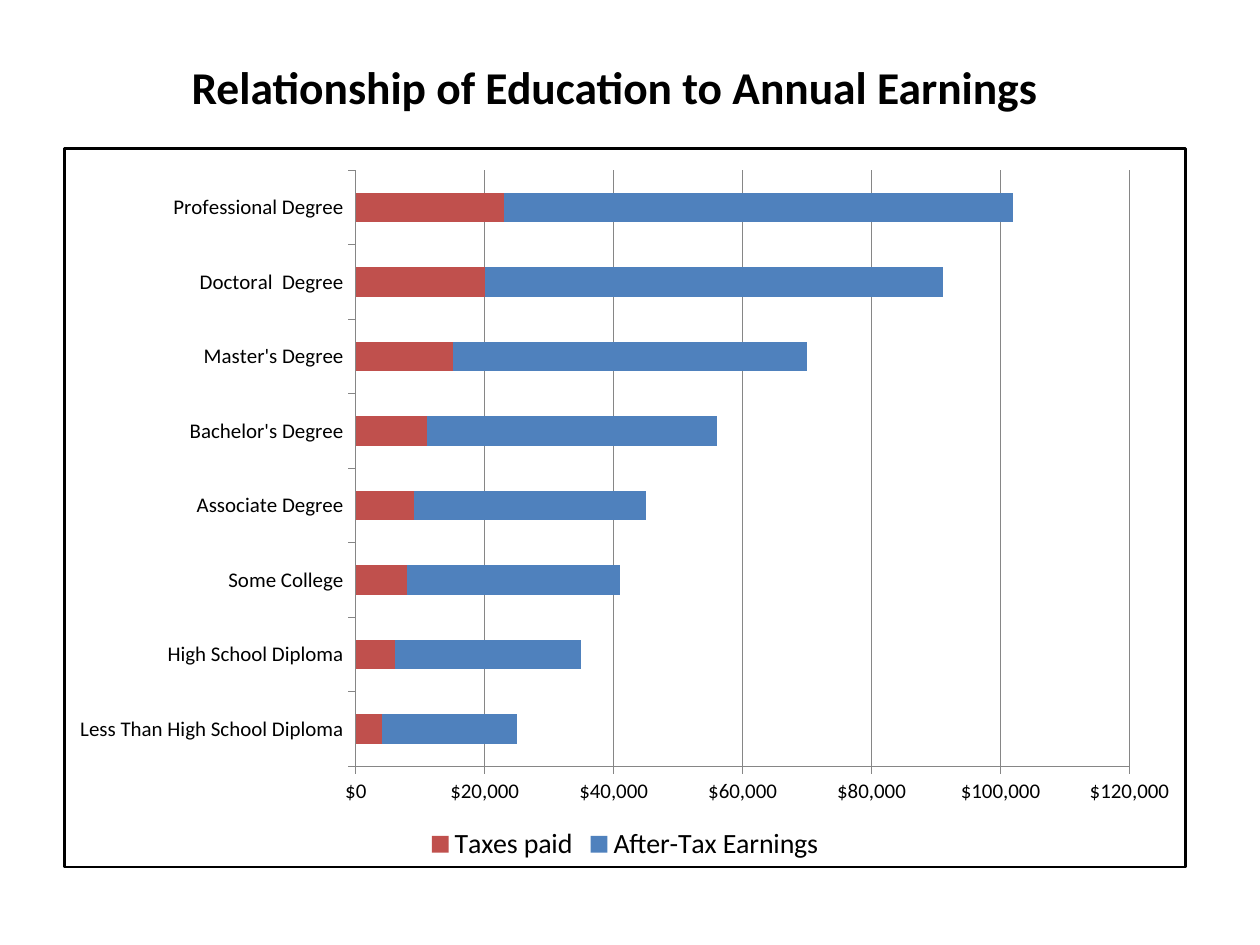
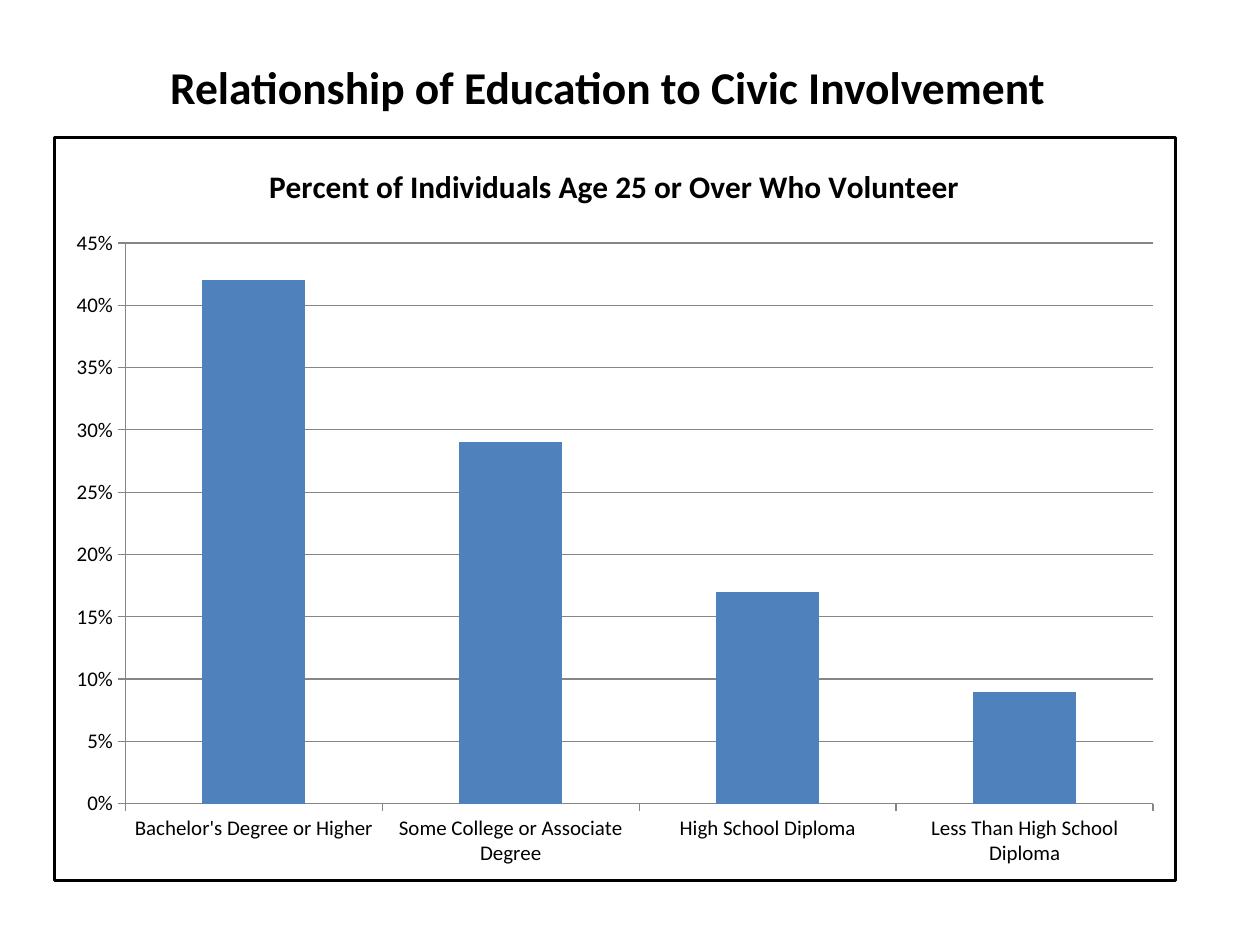
from dataclasses import dataclass
from typing import Optional

from lxml import etree
from pptx import Presentation
from pptx import util as u
from pptx.chart.data import CategoryChartData
from pptx.dml.color import RGBColor
from pptx.enum import chart as ch
from pptx.enum import text
from pptx.oxml import parse_xml
from pptx.oxml.ns import nsdecls, qn

PX = 9144  # EMU, 100 px to the inch
FONT = "Calibri"
BLACK, GREY, RED, BLUE = "000000", "868686", "C0504D", "4F81BD"
TITLE_TOP, TITLE_HEIGHT = 42, 54


@dataclass
class Box:
    left: int
    top: int
    width: int
    height: int


@dataclass
class Series:
    name: str
    values: list[float]
    color: str


@dataclass
class ChartSlide:
    title: str
    title_left: int
    title_width: int
    box: Box
    kind: ch.XL_CHART_TYPE
    categories: list[str]
    series: list[Series]
    number_format: str
    axis_max: float
    axis_step: float
    chart_title: Optional[str] = None
    legend: bool = False
    plot_layout: Optional[dict[str, float]] = None


SLIDES = [
    ChartSlide(
        "Relationship of Education to Annual Earnings", 142, 700,
        Box(50, 117, 892, 572), ch.XL_CHART_TYPE.BAR_STACKED,
        ["Less Than High School Diploma", "High School Diploma", "Some College",
         "Associate Degree", "Bachelor's Degree", "Master's Degree",
         "Doctoral  Degree", "Professional Degree"],
        [Series("Taxes paid",
                [4000, 6000, 8000, 9000, 11000, 15000, 20000, 23000], RED),
         Series("After-Tax Earnings",
                [21000, 29000, 33000, 36000, 45000, 55000, 71000, 79000], BLUE)],
        '"$"#,##0', 120000, 20000, legend=True,
        plot_layout={"x": 0.26, "y": 0.03, "w": 0.69, "h": 0.83},
    ),
    ChartSlide(
        "Relationship of Education to Civic Involvement", 125, 718,
        Box(42, 108, 892, 592), ch.XL_CHART_TYPE.COLUMN_CLUSTERED,
        ["Bachelor's Degree or Higher", "Some College or Associate Degree",
         "High School Diploma", "Less Than High School Diploma"],
        [Series("Series 1", [0.42, 0.29, 0.17, 0.09], BLUE)],
        "0%", 0.45, 0.05,
        chart_title="Percent of Individuals Age 25 or Over Who Volunteer",
    ),
]


def rgb(color: str) -> RGBColor:
    return RGBColor.from_string(color)


def set_font(font, size: int, bold: bool = False) -> None:
    font.name, font.size, font.bold = FONT, u.Pt(size), bold
    font.color.rgb = rgb(BLACK)


def set_line(line, color: str) -> None:
    line.color.rgb = rgb(color)
    line.width = u.Pt(0.75)


def add_title(slide, spec_: ChartSlide) -> None:
    sp = slide.shapes.title
    sp.left, sp.top = spec_.title_left * PX, TITLE_TOP * PX
    sp.width, sp.height = spec_.title_width * PX, TITLE_HEIGHT * PX
    tf = sp.text_frame
    tf.word_wrap = False
    tf.auto_size = text.MSO_AUTO_SIZE.NONE
    tf.vertical_anchor = text.MSO_ANCHOR.TOP
    p = tf.paragraphs[0]
    p.alignment = text.PP_ALIGN.LEFT
    r = p.add_run()
    r.text = spec_.title
    set_font(r.font, 26, True)


def add_border(chart) -> None:
    """Frame the whole chart area in black."""
    chart.element.find(qn("c:chart")).addnext(parse_xml(
        f'<c:spPr {nsdecls("c", "a")}><a:noFill/><a:ln w="{u.Pt(1.5)}">'
        f'<a:solidFill><a:srgbClr val="{BLACK}"/></a:solidFill></a:ln></c:spPr>'))


def place_plot(chart, fractions: dict[str, float]) -> None:
    """Fix the inner plot area as fractions of the chart."""
    area = chart.element.find(qn("c:chart")).find(qn("c:plotArea"))
    for old in area.findall(qn("c:layout")):
        area.remove(old)
    layout = etree.Element(qn("c:layout"))
    manual = etree.SubElement(layout, qn("c:manualLayout"))
    settings = {"layoutTarget": "inner", "xMode": "edge", "yMode": "edge", **fractions}
    for tag, value in settings.items():
        etree.SubElement(manual, qn(f"c:{tag}")).set("val", str(value))
    area.insert(0, layout)


def style_axes(chart, spec_: ChartSlide) -> None:
    for axis in (chart.category_axis, chart.value_axis):
        axis.major_tick_mark = ch.XL_TICK_MARK.OUTSIDE
        axis.minor_tick_mark = ch.XL_TICK_MARK.NONE
        set_font(axis.tick_labels.font, 12)
        set_line(axis.format.line, GREY)
    chart.category_axis.has_major_gridlines = False
    values = chart.value_axis
    values.minimum_scale, values.maximum_scale = 0, spec_.axis_max
    values.major_unit = spec_.axis_step
    values.has_major_gridlines = True
    set_line(values.major_gridlines.format.line, GREY)
    values.tick_labels.number_format = spec_.number_format
    values.tick_labels.number_format_is_linked = False


def add_chart(slide, spec_: ChartSlide) -> None:
    data = CategoryChartData(number_format=spec_.number_format)
    data.categories = spec_.categories
    for series in spec_.series:
        data.add_series(series.name, series.values)
    box = spec_.box
    chart = slide.shapes.add_chart(
        spec_.kind, box.left * PX, box.top * PX,
        box.width * PX, box.height * PX, data).chart
    set_font(chart.font, 10)

    plot = chart.plots[0]
    plot.gap_width = 150
    plot.vary_by_categories = False
    if spec_.kind == ch.XL_CHART_TYPE.BAR_STACKED:
        plot.overlap = 100
    for drawn, series in zip(plot.series, spec_.series):
        drawn.format.fill.solid()
        drawn.format.fill.fore_color.rgb = rgb(series.color)

    style_axes(chart, spec_)
    chart.has_title = spec_.chart_title is not None
    if spec_.chart_title:
        r = chart.chart_title.text_frame.paragraphs[0].add_run()
        r.text = spec_.chart_title
        set_font(r.font, 18, True)
        chart.chart_title.include_in_layout = False
    chart.has_legend = spec_.legend
    if spec_.legend:
        chart.legend.position = ch.XL_LEGEND_POSITION.BOTTOM
        chart.legend.include_in_layout = False
        set_font(chart.legend.font, 16)
    if spec_.plot_layout:
        place_plot(chart, spec_.plot_layout)
    add_border(chart)


def main() -> None:
    prs = Presentation()
    prs.slide_width, prs.slide_height = 1000 * PX, 750 * PX
    title_only = prs.slide_layouts[5]
    for spec_ in SLIDES:
        slide = prs.slides.add_slide(title_only)
        add_title(slide, spec_)
        add_chart(slide, spec_)
    prs.save("out.pptx")


if __name__ == "__main__":
    main()
